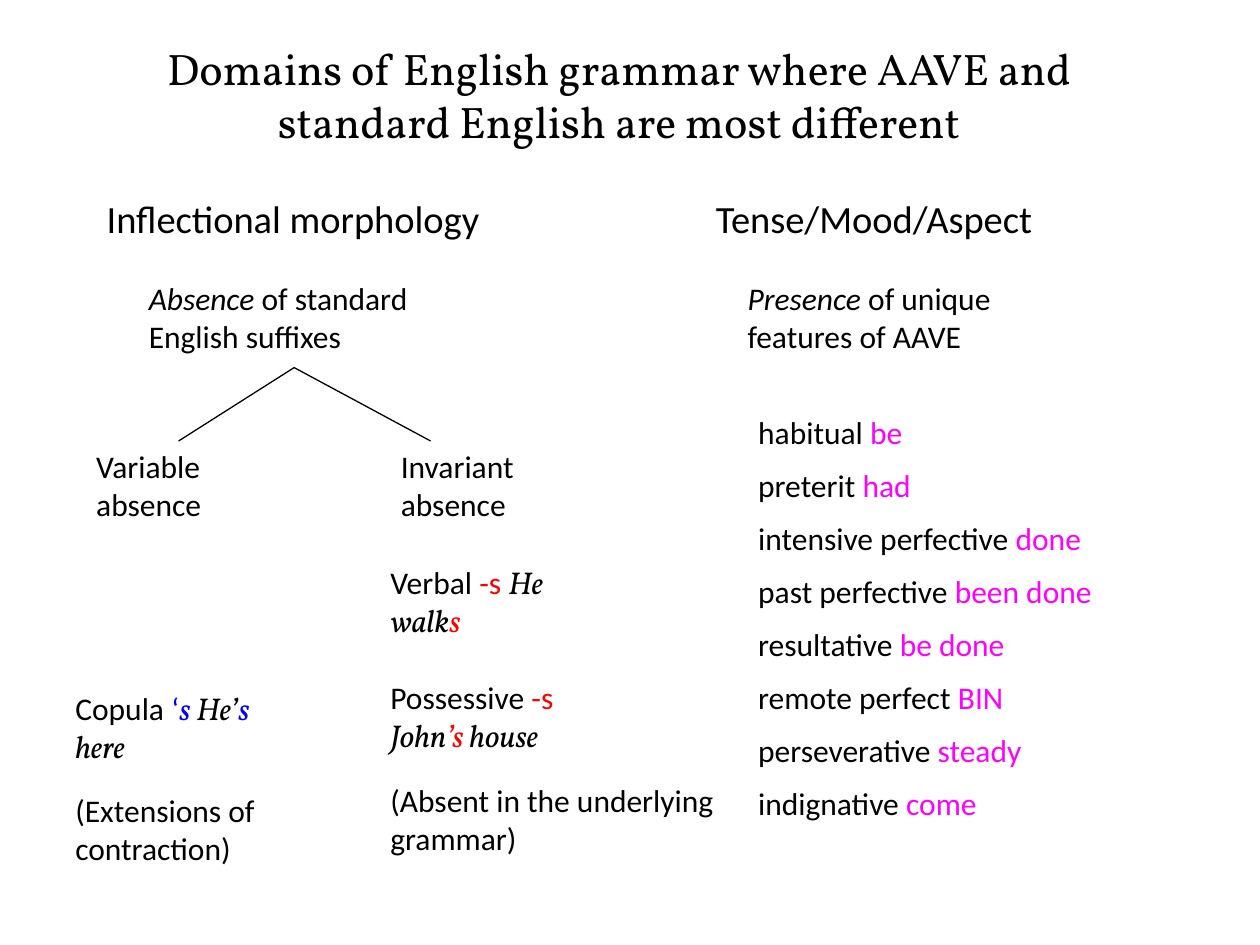
import lxml.etree
import pptx
import pptx.oxml.ns
import pptx.util
from pptx.dml.color import RGBColor
from pptx.enum.shapes import MSO_CONNECTOR
from pptx.enum.text import MSO_ANCHOR, MSO_AUTO_SIZE, PP_ALIGN

Cm = pptx.util.Cm
Pt = pptx.util.Pt
qn = pptx.oxml.ns.qn

COLORS = {"ink": "000000", "red": "FF0000", "blue": "0000FF", "pink": "FF00FF"}
SERIF = "Vollkorn"
EX = {"font": SERIF, "italic": True}
LEAN = {"italic": True}
RED = {"color": "red"}
PINK = {"color": "pink"}
TWO = 1.96

HEADS = [
    (1.9, 10.37, "Inflectional morphology"),
    (14.18, 9.53, "Tense/Mood/Aspect"),
]

NOTES = [
    (2.75, 5.5, 7.2, [("Absence", LEAN), (" of standard English suffixes", {})]),
    (14.82, 5.5, 7.2, [("Presence", LEAN), (" of unique features of AAVE", {})]),
    (1.69, 8.89, 4.23, [("Variable absence", {})]),
    (7.83, 8.89, 4.45, [("Invariant absence", {})]),
    (7.62, 11.22, 3.81, [("Verbal ", {}), ("-s ", RED), ("He walk", EX),
                         ("s", EX | RED)]),
    (7.62, 13.55, 5.08, [("Possessive ", {}), ("-s ", RED), ("John", EX),
                         ("’s ", EX | RED), ("house", EX)]),
    (1.27, 13.76, 4.23, [("Copula ", {}), ("‘", {"color": "blue"}),
                         ("s ", EX | {"color": "blue"}), ("He’", EX),
                         ("s ", EX | {"color": "blue"}), ("here", EX)]),
    (1.27, 15.82, 5.08, [("(Extensions of contraction)", {})]),
    (7.62, 15.62, 7.2, [("(Absent in the underlying grammar)", {})]),
]

TRAITS = [
    ("habitual ", "be"),
    ("preterit ", "had"),
    ("intensive perfective ", "done"),
    ("past perfective ", "been done"),
    ("resultative ", "be done"),
    ("remote perfect ", "BIN"),
    ("perseverative ", "steady"),
    ("indignative ", "come"),
]


def add_text(para, text, size=18, font="Calibri", color="ink", italic=False):
    """Add one run with its format to a paragraph."""
    run = para.add_run()
    run.text = text
    run.font.size = Pt(size)
    run.font.name = font
    run.font.italic = italic
    run.font.color.rgb = RGBColor.from_string(COLORS[color])


def set_frame(shape, left, top, width, height, anchor=MSO_ANCHOR.TOP):
    """Place a text shape and return its wrapped text frame."""
    shape.left, shape.top = Cm(left), Cm(top)
    shape.width, shape.height = Cm(width), Cm(height)
    frame = shape.text_frame
    frame.word_wrap = True
    frame.auto_size = MSO_AUTO_SIZE.NONE
    frame.vertical_anchor = anchor
    return frame


def add_note(slide, left, top, width, height, runs):
    """Add a text box that holds one paragraph of runs."""
    box = slide.shapes.add_textbox(0, 0, 0, 0)
    frame = set_frame(box, left, top, width, height)
    for text, style in runs:
        add_text(frame.paragraphs[0], text, **style)


def add_branch(slide, start, end):
    """Add a thin tree branch between two points."""
    line = slide.shapes.add_connector(
        MSO_CONNECTOR.STRAIGHT, *(Cm(n) for n in start + end))
    line.line.color.rgb = RGBColor.from_string(COLORS["ink"])
    line.line.width = Pt(0.75)
    props = line._element.spPr
    lxml.etree.SubElement(props, qn("a:effectLst"))


def fill_title(shape):
    """Fill the title placeholder."""
    frame = set_frame(shape, 1.9, 0.85, 21.17, 2.12, MSO_ANCHOR.MIDDLE)
    para = frame.paragraphs[0]
    para.alignment = PP_ALIGN.CENTER
    add_text(para, "Domains of English grammar where AAVE and "
             "standard English are most different", size=25.2, font=SERIF)


def fill_list(shape):
    """Fill the body placeholder with the plain list of features."""
    frame = set_frame(shape, 15.03, 8.2, 8.89, 9.98)
    for i, (label, form) in enumerate(TRAITS):
        para = frame.add_paragraph() if i else frame.paragraphs[0]
        para.space_before, para.space_after = Pt(0), Pt(8.7)
        props = para._p.get_or_add_pPr()
        props.set("marL", "0")
        props.set("indent", "0")
        lxml.etree.SubElement(props, qn("a:buNone"))
        add_text(para, label)
        add_text(para, form, **PINK)


def main():
    """Build and save the slide."""
    deck = pptx.Presentation()
    deck.slide_width, deck.slide_height = Cm(25.4), Cm(19.05)
    slide = deck.slides.add_slide(deck.slide_layouts[1])
    fill_title(slide.shapes.title)
    for left, width, text in HEADS:
        add_note(slide, left, 3.81, width, 1.19, [(text, {"size": 22})])
    for left, top, width, runs in NOTES:
        add_note(slide, left, top, width, TWO, runs)
    for end in (3.6, 8.68):
        add_branch(slide, (5.93, 7.41), (end, 8.89))
    fill_list(slide.placeholders[1])
    deck.save("out.pptx")


if __name__ == "__main__":
    main()
